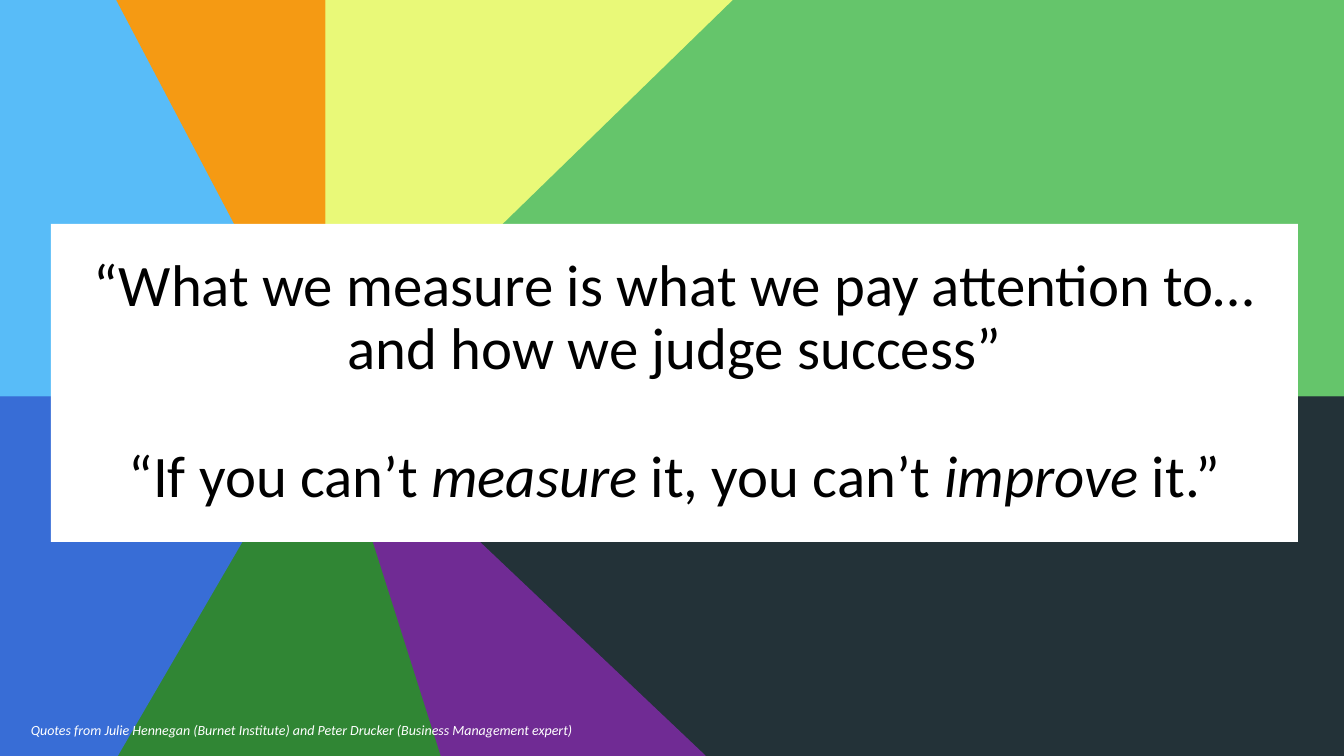
from dataclasses import dataclass

from pptx import Presentation
from pptx.dml.color import RGBColor
from pptx.enum.shapes import MSO_SHAPE as Shape
from pptx.enum.text import MSO_ANCHOR as Anchor, PP_ALIGN as Align
from pptx.util import Emu, Pt

PX = 9072
WIDTH, HEIGHT = 1344, 756
HUB = (326, 397)


@dataclass(frozen=True)
class Theme:
    """Colours and type sizes of the slide."""
    font: str = "Calibri"
    quote_size: int = 42
    credit_size: int = 10
    white: str = "FFFFFF"
    black: str = "000000"
    sky: str = "58BCF8"
    orange: str = "F59A13"
    yellow: str = "E9F978"
    green: str = "65C56B"
    slate: str = "233238"
    purple: str = "702B94"
    forest: str = "308634"
    blue: str = "386DD6"


THEME = Theme()

RAYS = [
    (THEME.sky, [(0, HUB[1]), (0, 0), (117, 0)]),
    (THEME.orange, [(117, 0), (HUB[0], 0)]),
    (THEME.yellow, [(HUB[0], 0), (734, 0)]),
    (THEME.green, [(734, 0), (WIDTH, 0), (WIDTH, HUB[1])]),
    (THEME.slate, [(WIDTH, HUB[1]), (WIDTH, HEIGHT), (705, HEIGHT)]),
    (THEME.purple, [(705, HEIGHT), (440, HEIGHT)]),
    (THEME.forest, [(440, HEIGHT), (117, HEIGHT)]),
    (THEME.blue, [(117, HEIGHT), (0, HEIGHT), (0, HUB[1])]),
]

QUOTES = [
    [("“What we measure is what we pay attention to… and how we judge success”", False)],
    [("“If you can’t ", False), ("measure", True), (" it, you can’t ", False),
     ("improve", True), (" it.”", False)],
]

CREDIT = ("Quotes from Julie Hennegan (Burnet Institute) and "
          "Peter Drucker (Business Management expert)")


def px(length):
    """Turn whole pixels into EMU."""
    return Emu(length * PX)


def color(code):
    """Turn a hex code into a colour."""
    return RGBColor.from_string(code)


def paint(shape, code):
    """Give a shape a solid fill and no shadow."""
    shape.shadow.inherit = False
    shape.fill.solid()
    shape.fill.fore_color.rgb = color(code)


def set_font(font, size, code):
    """Set typeface, size and colour."""
    font.name = THEME.font
    font.size = Pt(size)
    font.color.rgb = color(code)


def add_ray(page, code, rim):
    """Draw a wedge from the hub to points on the slide edge."""
    builder = page.shapes.build_freeform(*HUB, scale=PX)
    builder.add_line_segments(rim, close=True)
    ray = builder.convert_to_shape()
    paint(ray, code)
    ray.line.color.rgb = color(code)
    ray.line.width = Pt(1)


def add_quote_panel(page, left, top, width, height):
    """Draw the white panel with the centred quotes."""
    panel = page.shapes.add_shape(Shape.RECTANGLE, *map(px, (left, top, width, height)))
    paint(panel, THEME.white)
    panel.line.fill.background()
    frame = panel.text_frame
    frame.word_wrap = True
    frame.vertical_anchor = Anchor.MIDDLE
    for index, quote in enumerate(QUOTES):
        para = frame.add_paragraph() if index else frame.paragraphs[0]
        para.alignment = Align.CENTER
        para.line_spacing = 0.9
        if index:
            para.space_before = Pt(46)
        set_font(para.font, THEME.quote_size, THEME.black)
        for text, italic in quote:
            span = para.add_run()
            span.text = text
            if italic:
                span.font.italic = True


def add_credit(page, left, top, width, height):
    """Write the source line of the quotes."""
    box = page.shapes.add_textbox(*map(px, (left, top, width, height)))
    box.text_frame.word_wrap = True
    para = box.text_frame.paragraphs[0]
    para.text = CREDIT
    set_font(para.font, THEME.credit_size, THEME.white)
    para.font.italic = True


def main():
    """Build and save the slide."""
    deck = Presentation()
    deck.slide_width, deck.slide_height = px(WIDTH), px(HEIGHT)
    page = deck.slides.add_slide(deck.slide_layouts[6])
    for code, rim in RAYS:
        add_ray(page, code, rim)
    add_quote_panel(page, 51, 224, 1247, 318)
    add_credit(page, 21, 717, 818, 27)
    deck.save("out.pptx")


if __name__ == "__main__":
    main()
